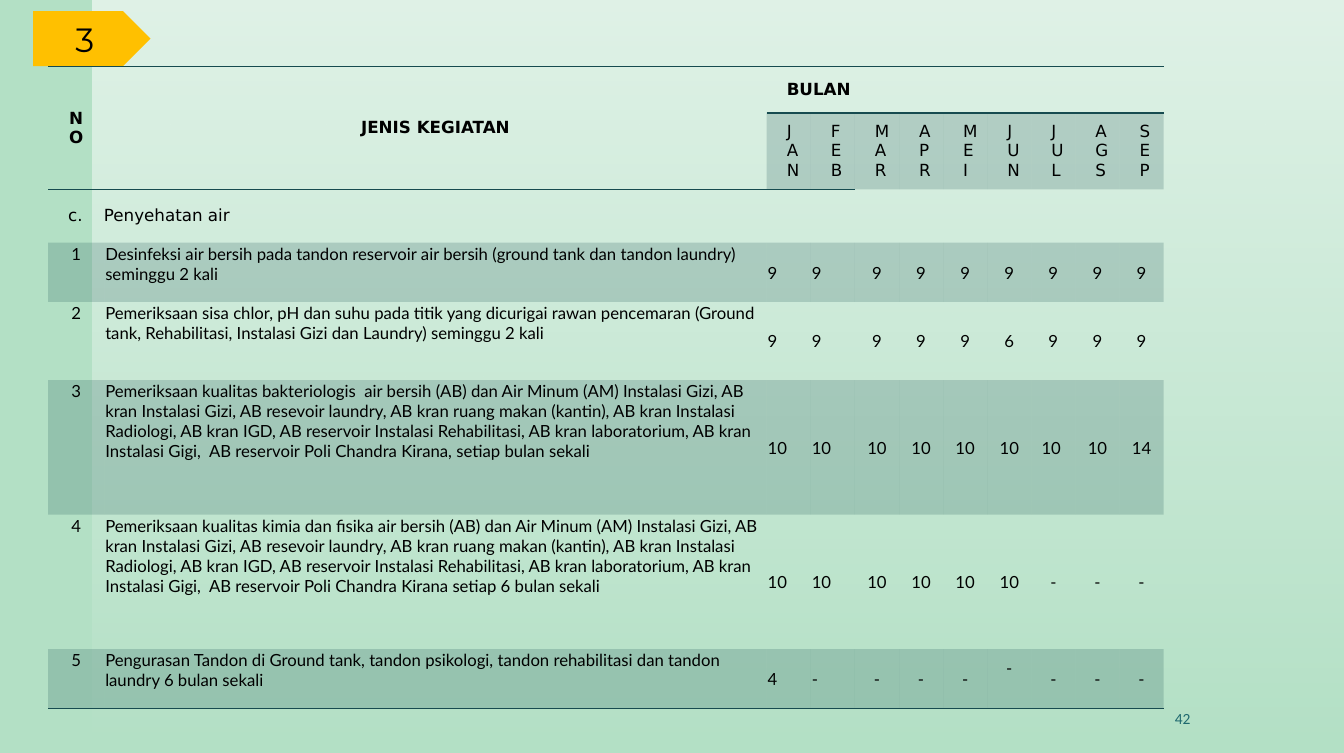
from dataclasses import dataclass

from lxml import etree
from pptx import Presentation, util as u
from pptx.dml.color import RGBColor
from pptx.enum import shapes, text
from pptx.oxml import ns

COLORS = {"page": "B3E0C5", "veil": "FFFFFF", "tab": "FFC000",
          "ink": "000000", "number": "1F696F", "teal": "164B4F"}
PAGE_WIDTH, PAGE_HEIGHT = u.Inches(13.39), u.Inches(7.5)
NO_STYLE = "{2D5ABB26-0587-4C30-8999-92F81FD0307C}"
HEAD_FONT, BODY_FONT = "DejaVu Sans", "Lato"
LEFT, CENTER, RIGHT = text.PP_ALIGN.LEFT, text.PP_ALIGN.CENTER, text.PP_ALIGN.RIGHT
MIDDLE, TOP = text.MSO_ANCHOR.MIDDLE, text.MSO_ANCHOR.TOP


@dataclass(frozen=True)
class Area:
    """A rectangle in percent of the slide's width and height."""
    left: float
    top: float
    width: float
    height: float

    def box(self) -> tuple[int, int, int, int]:
        return across(self.left), down(self.top), across(self.width), down(self.height)


@dataclass(frozen=True)
class Activity:
    description: str
    height: float
    counts: tuple[str, ...]


VEIL = Area(6.87, 0, 93.13, 100)
PAGE_NUMBER = Area(66.02, 92.67, 23.3, 5.33)
TAB = Area(2.46, 1.47, 8.74, 7.33)
TABLE = Area(3.58, 8.87, 82.9, 84.02)

MONTHS = ("JAN", "FEB", "MAR", "APR", "MEI", "JUN", "JUL", "AGS", "SEP")
FIRST_MONTH = 2
COLUMN_WIDTHS = [4.18, 49.29] + [3.27] * len(MONTHS)
HEADING_HEIGHTS = [5.2, 9.87, 7.07]
SECTION_ROW = 2
SECTION_SPAN = 4

ACTIVITIES = (
    Activity("Desinfeksi air bersih pada tandon reservoir air bersih (ground tank dan "
             "tandon laundry) seminggu 2 kali", 7.87, ("9",) * 9),
    Activity("Pemeriksaan sisa chlor, pH dan suhu pada titik yang dicurigai rawan "
             "pencemaran (Ground tank, Rehabilitasi, Instalasi Gizi dan Laundry) "
             "seminggu 2 kali ", 10.4, ("9",) * 5 + ("6",) + ("9",) * 3),
    Activity("Pemeriksaan kualitas bakteriologis  air bersih (AB) dan Air Minum (AM) "
             "Instalasi Gizi, AB kran Instalasi Gizi, AB resevoir laundry, AB kran ruang "
             "makan (kantin), AB kran Instalasi Radiologi, AB kran IGD, AB reservoir "
             "Instalasi Rehabilitasi, AB kran laboratorium, AB kran Instalasi Gigi,  AB "
             "reservoir Poli Chandra Kirana, setiap bulan sekali", 17.87,
             ("10",) * 6 + ("10 ", "10", "14")),
    Activity("Pemeriksaan kualitas kimia dan fisika air bersih (AB) dan Air Minum (AM) "
             "Instalasi Gizi, AB kran Instalasi Gizi, AB resevoir laundry, AB kran ruang "
             "makan (kantin), AB kran Instalasi Radiologi, AB kran IGD, AB reservoir "
             "Instalasi Rehabilitasi, AB kran laboratorium, AB kran Instalasi Gigi,  AB "
             "reservoir Poli Chandra Kirana setiap 6 bulan sekali", 17.87,
             ("10",) * 6 + ("-",) * 3),
    Activity("Pengurasan Tandon di Ground tank, tandon psikologi, tandon rehabilitasi "
             "dan tandon laundry 6 bulan sekali", 7.87, ("4",) + ("-",) * 8),
)


def across(percent: float) -> int:
    return round(PAGE_WIDTH * percent / 100)


def down(percent: float) -> int:
    return round(PAGE_HEIGHT * percent / 100)


def color(name: str) -> RGBColor:
    return RGBColor.from_string(COLORS[name])


def write(frame, words: str, *, font: str, size: float = 12, ink: str = "ink",
          bold: bool = False, align=LEFT) -> None:
    para = frame.paragraphs[0]
    para.alignment = align
    span = para.add_run()
    span.text = words
    span.font.name, span.font.size, span.font.bold = font, u.Pt(size), bold
    span.font.color.rgb = color(ink)


def add_alpha(fill_xml, percent: int) -> None:
    for shade in fill_xml.iter(ns.qn("a:srgbClr")):
        etree.SubElement(shade, ns.qn("a:alpha")).set("val", str(percent * 1000))


def add_veil(page) -> None:
    """Cover the page with white that fades out towards the bottom."""
    veil = page.shapes.add_shape(shapes.MSO_SHAPE.RECTANGLE, *VEIL.box())
    veil.shadow.inherit = False
    veil.line.fill.background()
    veil.fill.gradient()
    veil.fill.gradient_angle = 270
    for stop, position, alpha in zip(veil.fill.gradient_stops, (0, 1), (60, 0)):
        stop.position = position
        stop.color.rgb = color("veil")
        add_alpha(stop._gs, alpha)


def add_page_number(page) -> None:
    box = page.shapes.add_textbox(*PAGE_NUMBER.box())
    box.text_frame.word_wrap = True
    box.text_frame.vertical_anchor = MIDDLE
    write(box.text_frame, "42", font="Calibri", size=11.1, ink="number", align=RIGHT)


def add_tab(page) -> None:
    tab = page.shapes.add_shape(shapes.MSO_SHAPE.PENTAGON, *TAB.box())
    tab.shadow.inherit = False
    tab.line.fill.background()
    tab.fill.solid()
    tab.fill.fore_color.rgb = color("tab")
    tab.text_frame.vertical_anchor = MIDDLE
    write(tab.text_frame, "3", font="Montserrat", size=24.1, align=CENTER)


def add_border(cell, side: str) -> None:
    line = etree.SubElement(cell._tc.get_or_add_tcPr(), ns.qn(f"a:{side}"), w=str(u.Pt(1)))
    fill = etree.SubElement(line, ns.qn("a:solidFill"))
    etree.SubElement(fill, ns.qn("a:srgbClr"), val=COLORS["teal"])


def style_cell(cell, row: int, column: int, last_row: int) -> None:
    """Set borders, band fill and insets from the cell's place in the table."""
    if row == 0:
        add_border(cell, "lnT")
    if row in (0, last_row) or (row == 1 and column < SECTION_SPAN):
        add_border(cell, "lnB")
    if (row == 1 and column >= FIRST_MONTH) or (row > SECTION_ROW and row % 2):
        cell.fill.solid()
        cell.fill.fore_color.rgb = color("teal")
        add_alpha(cell._tc.tcPr.find(ns.qn("a:solidFill")), 20)
    else:
        cell.fill.background()
    heading = row <= SECTION_ROW
    cell.margin_left = cell.margin_right = u.Inches(0.2 if heading else 0.01)
    cell.margin_top = u.Inches(0.08 if heading else 0.01)
    cell.margin_bottom = u.Inches(0.08 if heading else 0)
    cell.vertical_anchor = MIDDLE if heading or column >= FIRST_MONTH else TOP


def fill_headings(table) -> None:
    for column, title in enumerate(("NO", "JENIS KEGIATAN")):
        table.cell(0, column).merge(table.cell(1, column))
        write(table.cell(0, column).text_frame, title, font=HEAD_FONT, bold=True, align=CENTER)
    table.cell(0, FIRST_MONTH).merge(table.cell(0, FIRST_MONTH + 6))
    write(table.cell(0, FIRST_MONTH).text_frame, "BULAN", font=HEAD_FONT, bold=True)
    for column, month in enumerate(MONTHS, FIRST_MONTH):
        write(table.cell(1, column).text_frame, month, font=HEAD_FONT, align=CENTER)
    table.cell(SECTION_ROW, 0).merge(table.cell(SECTION_ROW, SECTION_SPAN - 1))
    write(table.cell(SECTION_ROW, 0).text_frame, "c.    Penyehatan air", font=HEAD_FONT)


def fill_activities(table) -> None:
    for number, activity in enumerate(ACTIVITIES, 1):
        row = SECTION_ROW + number
        for column, words in enumerate((str(number), activity.description, *activity.counts)):
            align = LEFT if 1 <= column < SECTION_SPAN else CENTER
            write(table.cell(row, column).text_frame, words, font=BODY_FONT, align=align)


def add_schedule(page) -> None:
    heights = HEADING_HEIGHTS + [activity.height for activity in ACTIVITIES]
    table = page.shapes.add_table(len(heights), len(COLUMN_WIDTHS), *TABLE.box()).table
    table._tbl.tblPr.find(ns.qn("a:tableStyleId")).text = NO_STYLE
    table.first_row = table.horz_banding = False
    for column, width in zip(table.columns, COLUMN_WIDTHS):
        column.width = across(width)
    for row, height in zip(table.rows, heights):
        row.height = down(height)
    for row in range(len(heights)):
        for column in range(len(COLUMN_WIDTHS)):
            style_cell(table.cell(row, column), row, column, len(heights) - 1)
    fill_headings(table)
    fill_activities(table)
    june_cleaning = table.cell(len(heights) - 1, FIRST_MONTH + MONTHS.index("JUN"))
    june_cleaning.margin_bottom = u.Inches(0.22)


def main() -> None:
    deck = Presentation()
    deck.slide_width, deck.slide_height = PAGE_WIDTH, PAGE_HEIGHT
    page = deck.slides.add_slide(deck.slide_layouts[6])
    page.background.fill.solid()
    page.background.fill.fore_color.rgb = color("page")
    add_veil(page)
    add_page_number(page)
    add_tab(page)
    add_schedule(page)
    deck.save("out.pptx")


if __name__ == "__main__":
    main()
